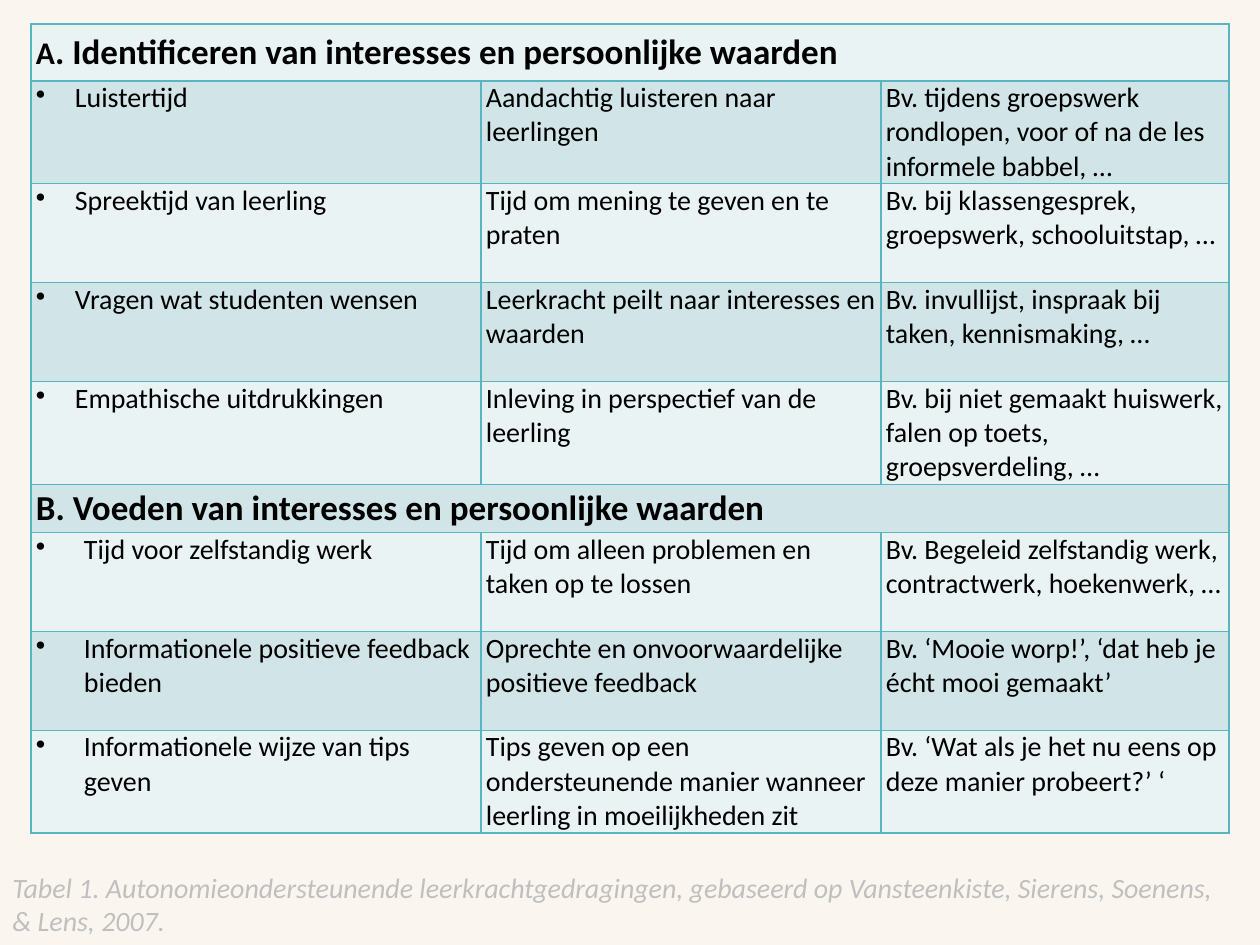
"""Builds a slide with a table of autonomy-supportive teacher behaviours."""
import pptx
import pptx.dml.color
import pptx.enum.text
import pptx.oxml
import pptx.oxml.ns
import pptx.util

PX = 914400 / 126
FONT = "Calibri"
BANDS = ("EAF3F4", "D1E5E8")
BORDER = "58B6C0"
COLUMNS = (450, 400, 348)
HEADING_HEIGHTS = (57, 48)
ROW_HEIGHT = 99
SECTIONS = (
    ((("A", 18), (". Identificeren van interesses en persoonlijke waarden", 20)), 39, (
        ("Luistertijd", "Aandachtig luisteren naar leerlingen",
         "Bv. tijdens groepswerk rondlopen, voor of na de les informele babbel, …"),
        ("Spreektijd van leerling", "Tijd om mening te geven en te praten",
         "Bv. bij klassengesprek, groepswerk, schooluitstap, …"),
        ("Vragen wat studenten wensen", "Leerkracht peilt naar interesses en waarden",
         "Bv. invullijst, inspraak bij taken, kennismaking, …"),
        ("Empathische uitdrukkingen", "Inleving in perspectief van de leerling",
         "Bv. bij niet gemaakt huiswerk, falen op toets, groepsverdeling, …"),
    )),
    ((("B. Voeden van interesses en persoonlijke waarden", 20),), 48, (
        ("Tijd voor zelfstandig werk", "Tijd om alleen problemen en taken op te lossen",
         "Bv. Begeleid zelfstandig werk, contractwerk, hoekenwerk, …"),
        ("Informationele positieve feedback bieden",
         "Oprechte en onvoorwaardelijke positieve feedback",
         "Bv. ‘Mooie worp!’, ‘dat heb je écht mooi gemaakt’"),
        ("Informationele wijze van tips geven",
         "Tips geven op een ondersteunende manier wanneer leerling in moeilijkheden zit",
         "Bv. ‘Wat als je het nu eens op deze manier probeert?’ ‘"),
    )),
)
CAPTION = ("Tabel 1. Autonomieondersteunende leerkrachtgedragingen, gebaseerd op "
           "Vansteenkiste, Sierens, Soenens, & Lens, 2007.")


def px(n):
    return pptx.util.Emu(round(n * PX))


def paint(fill, color):
    fill.solid()
    fill.fore_color.rgb = pptx.dml.color.RGBColor.from_string(color)


def add_run(p, text, size=16, color="000000", bold=False, italic=False):
    r = p.add_run()
    r.text = text
    r.font.name, r.font.size = FONT, pptx.util.Pt(size)
    r.font.bold, r.font.italic = bold, italic
    paint(r.font.fill, color)


def add_bullet(p, indent):
    pPr = p._p.get_or_add_pPr()
    pPr.set("marL", str(px(indent)))
    pPr.set("indent", str(-px(indent)))
    bullet = pptx.oxml.parse_xml(
        f'<a:buChar {pptx.oxml.ns.nsdecls("a")} char="•"/>')
    pPr.append(bullet)


def format_cell(cell, color):
    cell.margin_left = cell.margin_right = px(5)
    cell.margin_top = cell.margin_bottom = 0
    tcPr = cell._tc.get_or_add_tcPr()
    for side in ("lnL", "lnR", "lnT", "lnB"):
        tcPr.append(pptx.oxml.parse_xml(
            f'<a:{side} {pptx.oxml.ns.nsdecls("a")} w="12700"><a:solidFill>'
            f'<a:srgbClr val="{BORDER}"/></a:solidFill></a:{side}>'))
    paint(cell.fill, color)


def fill_heading(table, row, runs):
    cell = table.cell(row, 0)
    cell.merge(table.cell(row, len(COLUMNS) - 1))
    cell.vertical_anchor = pptx.enum.text.MSO_ANCHOR.MIDDLE
    for text, size in runs:
        add_run(cell.text_frame.paragraphs[0], text, size, bold=True)


def fill_row(table, row, texts, indent):
    for col, text in enumerate(texts):
        p = table.cell(row, col).text_frame.paragraphs[0]
        if col == 0:
            add_bullet(p, indent)
        add_run(p, text)


def add_behaviour_table(s):
    count = sum(1 + len(rows) for _, _, rows in SECTIONS)
    table = s.shapes.add_table(count, len(COLUMNS), px(31), px(24),
                               px(sum(COLUMNS)), px(805)).table
    table.first_row = table.horz_banding = False
    for column, width in zip(table.columns, COLUMNS):
        column.width = px(width)
    for i, row in enumerate(table.rows):
        row.height = px(ROW_HEIGHT)
        for cell in row.cells:
            format_cell(cell, BANDS[i % 2])
    i = 0
    for (heading, indent, rows), height in zip(SECTIONS, HEADING_HEIGHTS):
        table.rows[i].height = px(height)
        fill_heading(table, i, heading)
        for i, texts in enumerate(rows, i + 1):
            fill_row(table, i, texts, indent)
        i += 1


def add_caption(s):
    tf = s.shapes.add_textbox(0, px(864), px(1229), px(81)).text_frame
    tf.word_wrap = True
    tf.auto_size = pptx.enum.text.MSO_AUTO_SIZE.SHAPE_TO_FIT_TEXT
    add_run(tf.paragraphs[0], CAPTION, color="BFBFBF", italic=True)


def main():
    prs = pptx.Presentation()
    prs.slide_width, prs.slide_height = px(1260), px(945)
    s = prs.slides.add_slide(prs.slide_layouts[6])
    paint(s.background.fill, "FAF6EF")
    add_behaviour_table(s)
    add_caption(s)
    prs.save("out.pptx")


if __name__ == "__main__":
    main()
